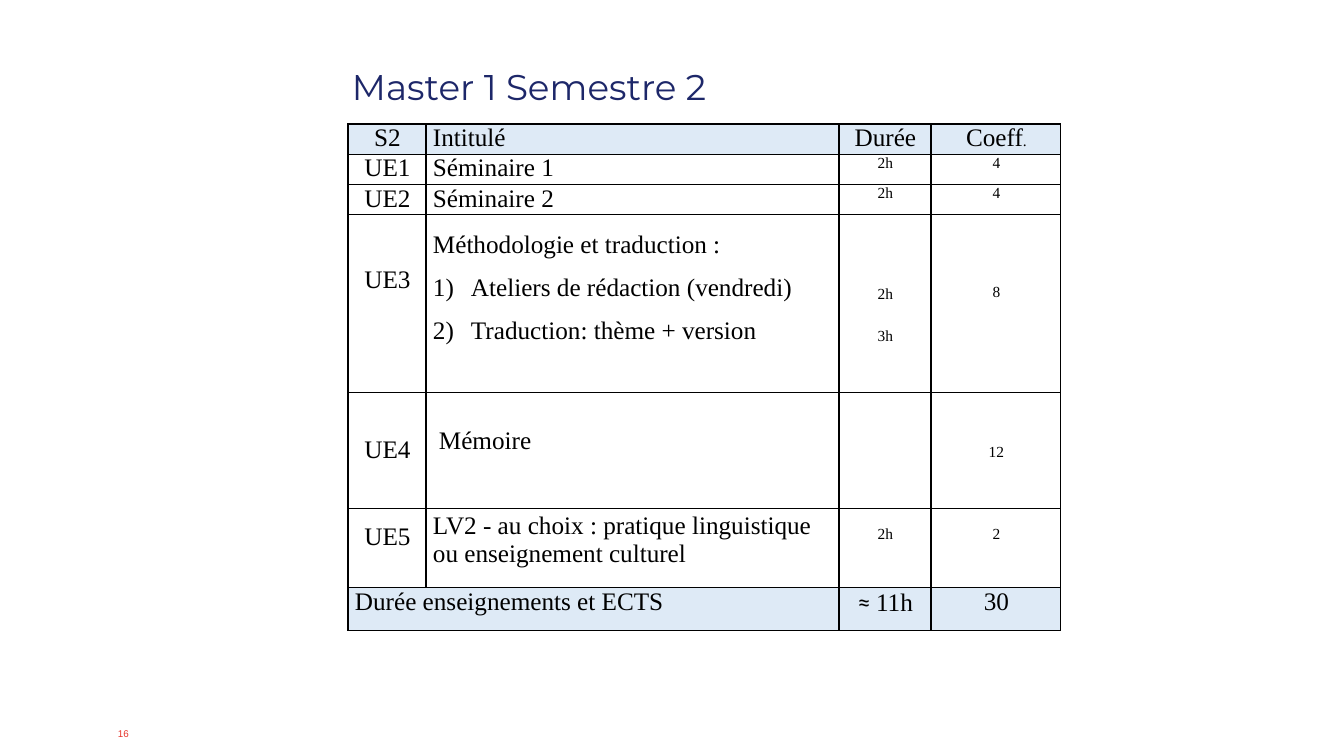
from lxml.etree import SubElement
from pptx import Presentation
from pptx.dml.color import RGBColor
from pptx.enum.text import MSO_ANCHOR as Anchor, PP_ALIGN as Align
from pptx.oxml import parse_xml
from pptx.oxml.ns import nsdecls, qn
from pptx.util import Pt

PX = 914400 / 100.8
COLORS = {"navy": "1D2769", "red": "E6332A", "black": "000000",
          "header": "DEEAF6", "white": "FFFFFF"}
SERIF = "Times New Roman"
BODY, SMALL = 18, 11
COLUMNS = [78, 413, 92, 130]
ROWS = [30, 30, 30, 178, 116, 79, 43]
HEADER_ROWS = (0, 6)


def entry(*lines, size=BODY, top=0, left=7, gap=0, numbered=False):
    """Describe the text of one table cell."""
    return {"lines": lines, "size": size, "top": top, "left": left,
            "gap": gap, "numbered": numbered}


def small(*lines, **options):
    """Describe a cell holding a duration or a coefficient."""
    return entry(*lines, size=SMALL, **options)


CELLS = [
    [entry("S2"), entry("Intitulé"), entry("Durée"),
     entry([("Coeff", {}), (".", {"size": Pt(SMALL)})])],
    [entry("UE1"), entry("Séminaire 1"), small("2h"), small("4")],
    [entry("UE2"), entry("Séminaire 2"), small("2h"), small("4")],
    [entry("UE3", top=51),
     entry("Méthodologie et traduction :", "Ateliers de rédaction (vendredi)",
           "Traduction: thème + version", top=16, gap=11, numbered=True),
     small("2h", "3h", top=71, gap=17.4), small("8", top=69)],
    [entry("UE4", top=43), entry("Mémoire", top=34, left=13), None,
     small("12", top=51)],
    [entry("UE5", top=14),
     entry("LV2 - au choix : pratique linguistique",
           "ou enseignement culturel", top=3),
     small("2h", top=17), small("2", top=17)],
    [entry("Durée enseignements et ECTS"), None,
     entry([("≈ ", {"name": "Calibri"}), ("11h", {})]), entry("30")],
]


def px(length):
    """Turn pixels into EMU."""
    return round(length * PX)


def apply(target, values):
    """Set each attribute of target from a dict."""
    for name, value in values.items():
        setattr(target, name, value)


def add_run(paragraph, text, color, **font):
    """Append a formatted run to a paragraph."""
    run = paragraph.add_run()
    run.text = text
    apply(run.font, font)
    run.font.color.rgb = RGBColor.from_string(COLORS[color])


def add_label(slide, box, text, color, wrap, **font):
    """Place one line of text at the bottom of a box."""
    frame = slide.shapes.add_textbox(*map(px, box)).text_frame
    apply(frame, {"word_wrap": wrap, "vertical_anchor": Anchor.BOTTOM,
                  "margin_left": px(4), "margin_right": px(4),
                  "margin_top": 0, "margin_bottom": 0})
    paragraph = frame.paragraphs[0]
    paragraph.line_spacing = 0.9
    add_run(paragraph, text, color, **font)


def add_number(paragraph):
    """Number a paragraph with a hanging indent."""
    properties = paragraph._p.get_or_add_pPr()
    apply_indent = {"marL": px(38), "indent": -px(38)}
    for name, value in apply_indent.items():
        properties.set(name, str(value))
    SubElement(properties, qn("a:buAutoNum"), type="arabicParenR")


def style_cell(cell, fill):
    """Fill a cell and draw its four borders."""
    apply(cell, {"margin_left": 0, "margin_right": 0,
                 "margin_top": 0, "margin_bottom": 0})
    cell.fill.solid()
    cell.fill.fore_color.rgb = RGBColor.from_string(COLORS[fill])
    properties = cell._tc.get_or_add_tcPr()
    for index, side in enumerate("LRTB"):
        properties.insert(index, parse_xml(
            f'<a:ln{side} {nsdecls("a")} w="{Pt(1)}"><a:solidFill>'
            f'<a:srgbClr val="{COLORS["black"]}"/></a:solidFill></a:ln{side}>'))


def fill_cell(cell, content, centred):
    """Write the lines of one entry into its cell."""
    cell.margin_top = px(content["top"])
    cell.margin_left = px(1 if centred else content["left"])
    frame = cell.text_frame
    for index, line in enumerate(content["lines"]):
        paragraph = frame.add_paragraph() if index else frame.paragraphs[0]
        if index and content["numbered"]:
            add_number(paragraph)
        if index:
            paragraph.space_before = Pt(content["gap"])
        paragraph.alignment = Align.CENTER if centred else Align.LEFT
        runs = [(line, {})] if isinstance(line, str) else line
        for text, changes in runs:
            font = {"name": SERIF, "size": Pt(content["size"])} | changes
            add_run(paragraph, text, "black", **font)


def add_course_table(slide, left, top):
    """Draw the table of teaching units from its top left corner."""
    box = (left, top, sum(COLUMNS), sum(ROWS))
    table = slide.shapes.add_table(len(ROWS), len(COLUMNS), *map(px, box)).table
    apply(table, {"first_row": False, "horz_banding": False})
    for column, width in zip(table.columns, COLUMNS):
        column.width = px(width)
    for row, height in zip(table.rows, ROWS):
        row.height = px(height)
    total = len(ROWS) - 1
    table.cell(total, 0).merge(table.cell(total, 1))
    for i, contents in enumerate(CELLS):
        for j, content in enumerate(contents):
            cell = table.cell(i, j)
            style_cell(cell, "header" if i in HEADER_ROWS else "white")
            if content:
                fill_cell(cell, content, j != 1 and (i, j) != (total, 0))


def main():
    """Build the semester slide and save it."""
    presentation = Presentation()
    apply(presentation, {"slide_width": px(1344), "slide_height": px(756)})
    slide = presentation.slides.add_slide(presentation.slide_layouts[6])
    add_label(slide, (114, 728, 25, 12), "16", "red", False,
              name="Arial", size=Pt(7))
    add_label(slide, (348, 44, 649, 64), "Master 1 Semestre 2", "navy", True,
              name="Montserrat", size=Pt(25.5))
    add_course_table(slide, 348, 124)
    presentation.save("out.pptx")


if __name__ == "__main__":
    main()
